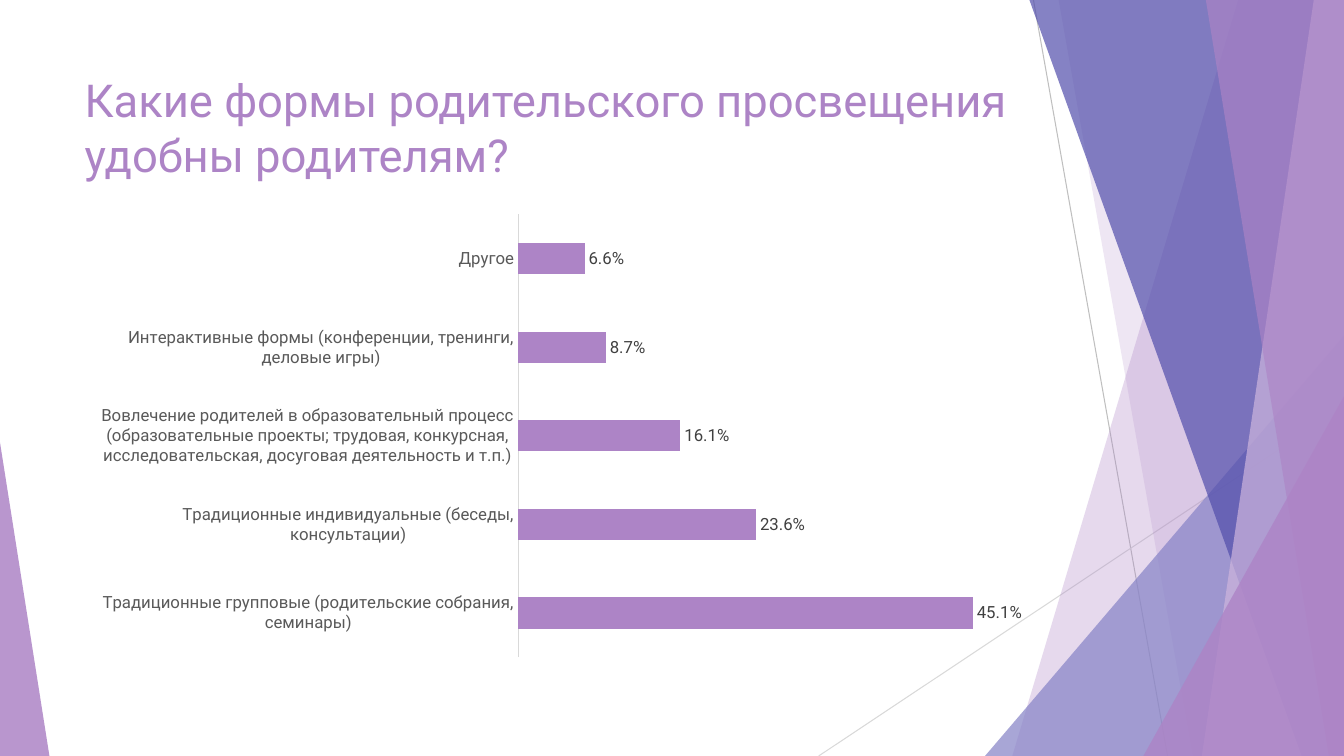
from lxml import etree
from pptx import Presentation
from pptx.chart.data import CategoryChartData
from pptx.dml.color import RGBColor
from pptx.enum.chart import XL_CHART_TYPE, XL_LABEL_POSITION, XL_TICK_MARK
from pptx.enum.shapes import MSO_CONNECTOR, MSO_SHAPE
from pptx.enum.text import MSO_ANCHOR
from pptx.oxml import parse_xml
from pptx.oxml.ns import nsdecls, qn
from pptx.util import Inches, Pt

BAR = XL_CHART_TYPE.BAR_CLUSTERED
OUTSIDE = XL_LABEL_POSITION.OUTSIDE_END
NO_TICK = XL_TICK_MARK.NONE
STRAIGHT = MSO_CONNECTOR.STRAIGHT
TRIANGLE = MSO_SHAPE.ISOSCELES_TRIANGLE
TOP = MSO_ANCHOR.TOP

W, H = 13.33, 7.5
FONT = "Roboto"
PURPLE = "AD84C6"

# Share of parents by form, from the bottom bar up
FORMS = [
    ("Традиционные групповые (родительские собрания, семинары)", 0.451),
    ("Традиционные индивидуальные (беседы, консультации)", 0.236),
    ("Вовлечение родителей в образовательный процесс (образовательные проекты; "
     "трудовая, конкурсная, исследовательская, досуговая деятельность и т.п.)", 0.161),
    ("Интерактивные формы (конференции, тренинги, деловые игры)", 0.087),
    ("Другое", 0.066),
]


def rgb(color):
    return RGBColor.from_string(color)


def paint(s, color, opacity):
    """Fill without outline; opacity in percent."""
    s.shadow.inherit = False
    s.line.fill.background()
    s.fill.solid()
    s.fill.fore_color.rgb = rgb(color)
    clr = s.fill._xPr.find(qn("a:solidFill"))[0]
    etree.SubElement(clr, qn("a:alpha")).set("val", str(opacity * 1000))


def add_line(sp, x1, y1, x2, y2, color):
    c = sp.add_connector(STRAIGHT, Inches(x1), Inches(y1), Inches(x2), Inches(y2))
    c.line.color.rgb = rgb(color)
    c.line.width = Pt(0.75)
    etree.SubElement(c._element.spPr, qn("a:effectLst"))


def add_band(sp, top_x, bottom_x, color, opacity):
    """Full-height band from a slanted left edge to the right of the slide."""
    fb = sp.build_freeform(Inches(top_x), 0)
    corners = [(W, 0), (W, H), (bottom_x, H)]
    fb.add_line_segments([(Inches(x), Inches(y)) for x, y in corners], close=True)
    paint(fb.convert_to_shape(), color, opacity)


def add_triangle(sp, x, y, w, apex, color, opacity):
    """Right triangle standing on the bottom edge of the slide."""
    s = sp.add_shape(TRIANGLE, Inches(x), Inches(y), Inches(w), Inches(H - y))
    s.adjustments[0] = apex
    paint(s, color, opacity)


def set_font(font, size, color):
    font.name = FONT
    font.size = Pt(size)
    font.color.rgb = rgb(color)


def add_text(sp, text, x, y, w, h, size=18, color="000000"):
    tf = sp.add_textbox(Inches(x), Inches(y), Inches(w), Inches(h)).text_frame
    tf.word_wrap = True
    tf.vertical_anchor = TOP
    r = tf.paragraphs[0].add_run()
    r.text = text
    set_font(r.font, size, color)


def set_plot_area(chart, x, y, w, h):
    """Place the inner plot area by fractions of the chart."""
    plot_area = chart._chartSpace.chart.plotArea
    for old in plot_area.findall(qn("c:layout")):
        plot_area.remove(old)
    values = [("layoutTarget", "inner"), ("xMode", "edge"), ("yMode", "edge"),
              ("x", x), ("y", y), ("w", w), ("h", h)]
    parts = "".join(f'<c:{tag} val="{val}"/>' for tag, val in values)
    plot_area.insert(0, parse_xml(
        f'<c:layout {nsdecls("c")}><c:manualLayout>{parts}</c:manualLayout></c:layout>'))


def add_bar_chart(sp, x, y, w, h):
    data = CategoryChartData(number_format="0.0%")
    data.categories = [name for name, _ in FORMS]
    data.add_series("Доля родителей", [share for _, share in FORMS])
    chart = sp.add_chart(BAR, Inches(x), Inches(y), Inches(w), Inches(h), data).chart
    chart.has_legend = False
    chart.has_title = False
    set_font(chart.font, 10, "000000")
    set_plot_area(chart, 0.457, 0.03, 0.543, 0.955)

    # Axes
    cat = chart.category_axis
    cat.major_tick_mark = NO_TICK
    cat.format.line.color.rgb = rgb("D9D9D9")
    cat.format.line.width = Pt(0.75)
    set_font(cat.tick_labels.font, 12, "595959")
    val = chart.value_axis
    val.minimum_scale, val.maximum_scale = 0, 0.5
    val.has_major_gridlines = False
    val.visible = False

    # Bars and their labels
    plot = chart.plots[0]
    plot.gap_width = 182
    plot.vary_by_categories = False
    fill = plot.series[0].format.fill
    fill.solid()
    fill.fore_color.rgb = rgb(PURPLE)
    labels = plot.series[0].data_labels
    labels.show_value = True
    labels.number_format = "0.0%"
    labels.number_format_is_linked = False
    labels.position = OUTSIDE
    set_font(labels.font, 12, "404040")


def main():
    prs = Presentation()
    prs.slide_width, prs.slide_height = Inches(W), Inches(H)
    sp = prs.slides.add_slide(prs.slide_layouts[6]).shapes

    # Decoration, back to front
    add_line(sp, 10.25, 0, 11.58, H, "BFBFBF")
    add_line(sp, W, 4.03, 8.12, H, "D9D9D9")
    add_band(sp, 12.28, 10.04, PURPLE, 30)
    add_band(sp, 10.5, 11.83, PURPLE, 20)
    add_triangle(sp, 9.77, 3.33, 3.56, 1, "8784C7", 72)
    add_band(sp, 10.21, 12.91, "524EAB", 70)
    add_band(sp, 13.03, 11.92, "CEB5DD", 70)
    add_band(sp, 11.96, 13.18, PURPLE, 65)
    add_triangle(sp, 11.34, 3.93, 1.99, 1, PURPLE, 80)
    add_triangle(sp, 0, 4.39, 0.49, 0, PURPLE, 85)

    # Title and chart
    add_text(sp, "Какие формы родительского просвещения удобны родителям?",
             0.74, 0.67, 9.4, 1.44, size=32.4, color=PURPLE)
    add_bar_chart(sp, 0.93, 1.99, 9.21, 4.6)

    prs.save("out.pptx")


if __name__ == "__main__":
    main()
